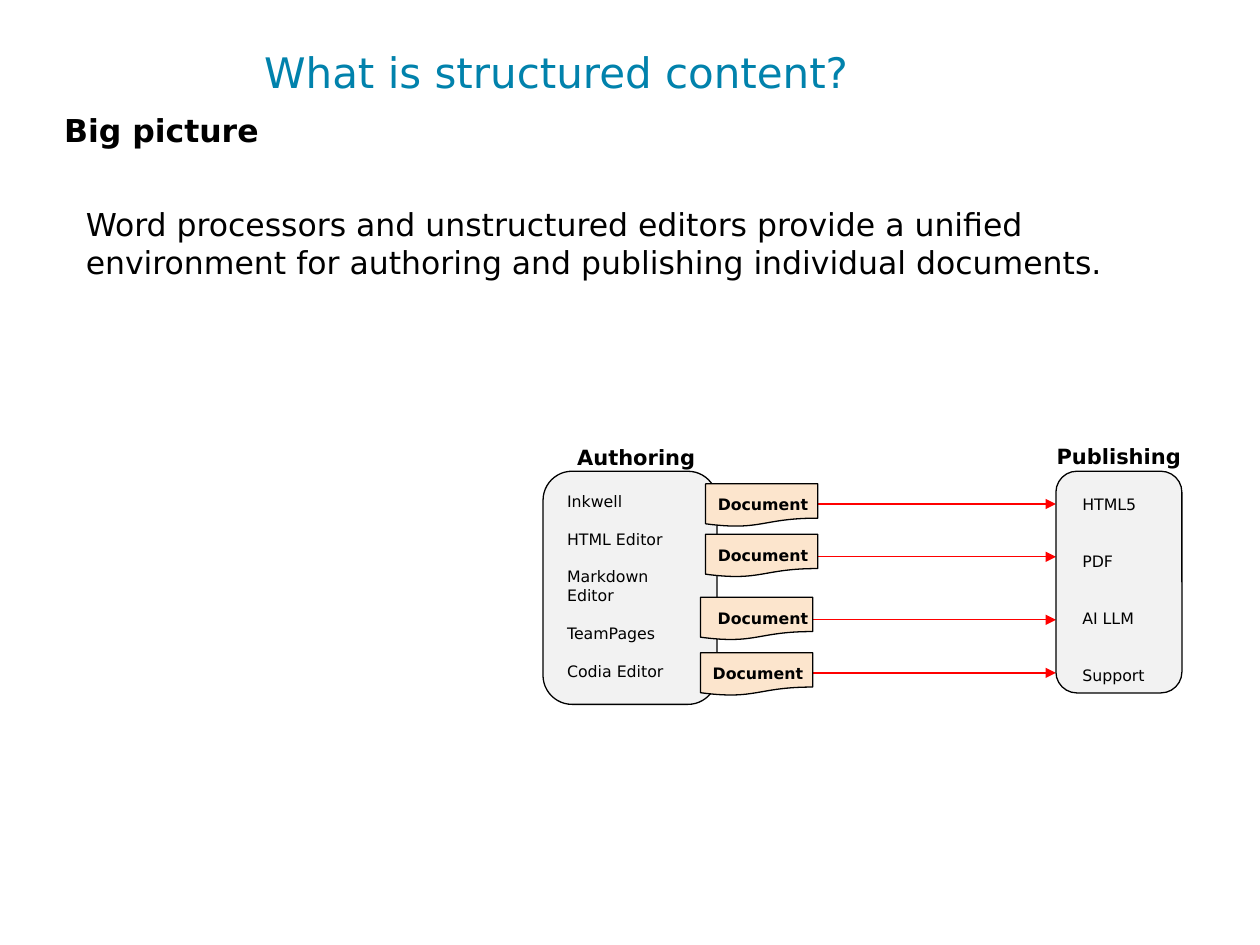
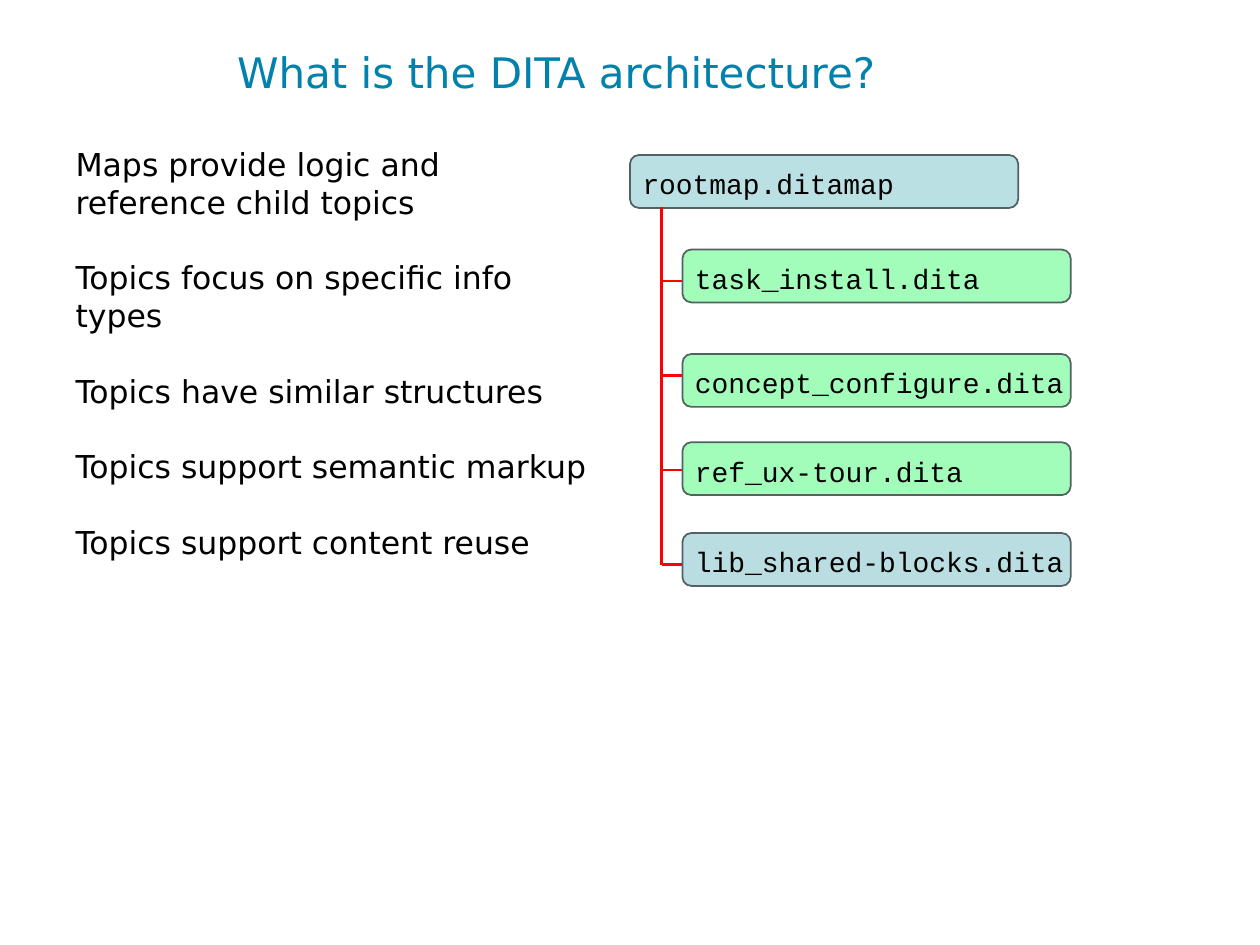
from lxml.etree import SubElement
from pptx import Presentation
from pptx.dml.color import RGBColor
from pptx.enum.shapes import MSO_CONNECTOR as Connector, MSO_SHAPE as Shape
from pptx.enum.text import MSO_ANCHOR as Anchor, MSO_AUTO_SIZE as AutoSize, PP_ALIGN as Align
from pptx.oxml.ns import qn
from pptx.util import Pt

# Shared look
BLACK = RGBColor(0x00, 0x00, 0x00)
RED = RGBColor(0xFF, 0x00, 0x00)
TEAL = RGBColor(0x01, 0x82, 0xAC)
PANEL_GREY = RGBColor(0xF2, 0xF2, 0xF2)
PAPER = RGBColor(0xFC, 0xE5, 0xCD)
SLATE = RGBColor(0x52, 0x62, 0x63)
MAP_BLUE = RGBColor(0xBB, 0xE0, 0xE3)
LIBRARY_BLUE = RGBColor(0xBA, 0xDD, 0xE1)
TOPIC_GREEN = RGBColor(0xA2, 0xFC, 0xBA)
SANS, MONO = "DejaVu Sans", "Courier New"


def place(shape, left, top, width, height):
    shape.left, shape.top, shape.width, shape.height = map(Pt, (left, top, width, height))


def write(frame, lines, size, font=SANS, color=BLACK, bold=False, align=Align.LEFT,
          gap=0, anchor=Anchor.TOP, insets=(7.2, 3.6, 7.2, 3.6)):
    """Fill a text frame, one paragraph a line, with gap points between them."""
    frame.text = "\n".join(lines)
    frame.auto_size = AutoSize.NONE
    frame.word_wrap = True
    frame.vertical_anchor = anchor
    (frame.margin_left, frame.margin_top,
     frame.margin_right, frame.margin_bottom) = map(Pt, insets)
    for index, para in enumerate(frame.paragraphs):
        para.alignment = align
        para.space_before = Pt(gap if index else 0)
        for span in para.runs:
            span.font.size, span.font.name = Pt(size), font
            span.font.bold, span.font.color.rgb = bold, color


def add_page(deck, title, body_lines, body_area, gap=0):
    """Add a page with the shared title style and an unbulleted body."""
    page = deck.slides.add_slide(deck.slide_layouts[1])
    place(page.shapes.title, 23.8, 21.6, 588.2, 38.2)
    write(page.shapes.title.text_frame, [title], 24, color=TEAL,
          align=Align.CENTER, anchor=Anchor.MIDDLE)
    body = page.placeholders[1]
    place(body, *body_area)
    write(body.text_frame, body_lines, 18, gap=gap)
    for para in body.text_frame.paragraphs:
        properties = para.alignment is not None and para._p.get_or_add_pPr()
        properties.set("marL", "0")
        properties.set("indent", "0")
        SubElement(properties, qn("a:buNone"))
    return page


def add_label(page, text, area, size, align=Align.LEFT):
    box = page.shapes.add_textbox(*map(Pt, area))
    write(box.text_frame, [text], size, bold=True, align=align)


def add_block(page, kind, area, fill, lines, size, line=BLACK, weight=0.75, **style):
    """Add an outlined, filled shape that holds its own text."""
    block = page.shapes.add_shape(kind, *map(Pt, area))
    block.shadow.inherit = False
    block.fill.solid()
    block.fill.fore_color.rgb = fill
    block.line.color.rgb = line
    block.line.width = Pt(weight)
    write(block.text_frame, lines, size, **style)


def add_line(page, start, end, weight, arrow=False):
    line = page.shapes.add_connector(Connector.STRAIGHT, *map(Pt, (*start, *end)))
    line.line.color.rgb = RED
    line.line.width = Pt(weight)
    properties = line.element.spPr
    if arrow:
        SubElement(properties.find(qn("a:ln")), qn("a:tailEnd"), type="triangle")
    SubElement(properties, qn("a:effectLst"))


def build_content_page(deck):
    page = add_page(
        deck, "What is structured content?",
        ["Word processors and unstructured editors provide a unified environment "
         "for authoring and publishing individual documents."],
        (41.8, 113.8, 635.8, 51.1))
    add_label(page, "Big picture", (29.5, 59.8, 140, 28.8), 18)

    # Arrows from documents to publishing
    for y in (288, 318.2, 354.2, 384.5):
        add_line(page, (458.6, y), (603.4, y), 0.75, arrow=True)

    # Authoring and publishing panels
    add_label(page, "Authoring", (316.8, 250.6, 93.6, 25), 12, Align.CENTER)
    add_label(page, "Publishing", (576.7, 249.8, 125.3, 25), 12, Align.CENTER)
    add_block(page, Shape.ROUNDED_RECTANGLE, (310.3, 269.3, 99.4, 133.2), PANEL_GREY,
              ["Inkwell", "HTML Editor", "Markdown Editor", "TeamPages", "Codia Editor"],
              9, gap=10.8, insets=(8.9, 6.7, 10.3, 0))
    add_block(page, Shape.ROUNDED_RECTANGLE, (603.4, 269.3, 72, 126.7), PANEL_GREY,
              ["HTML5", "PDF", "AI LLM", "Support"],
              9, gap=21.6, insets=(11.6, 10.2, 0, 0))

    # Documents: left, top, text indent
    documents = [(403.2, 276.5, 1.4), (403.2, 305.3, 1.4),
                 (400.3, 341.3, 7.2), (400.3, 373, 1.4)]
    for left, top, indent in documents:
        add_block(page, Shape.FLOWCHART_DOCUMENT, (left, top, 64.1, 24.5), PAPER,
                  ["Document"], 9, bold=True, align=Align.CENTER,
                  insets=(indent, 6.5, 0, 0))


def build_architecture_page(deck):
    page = add_page(
        deck, "What is the DITA architecture?",
        ["Maps provide logic and\vreference child topics",
         "Topics focus on specific info\vtypes",
         "Topics have similar structures",
         "Topics support semantic markup",
         "Topics support content reuse"],
        (36, 79.2, 311.8, 269.3), gap=21.6)

    # Branches of the map tree
    trunk, first_branch, pitch = 378, 160.6, 54
    branches = [first_branch + pitch * index for index in range(4)]
    for y in branches:
        add_line(page, (414, y), (trunk, y), 1.5)

    # Map and topic files
    files = [
        ("rootmap.ditamap", 360, 88.6, MAP_BLUE),
        ("task_install.dita", 390, 142.6, TOPIC_GREEN),
        ("concept_configure.dita", 390, 202.3, TOPIC_GREEN),
        ("ref_ux-tour.dita", 390, 252.7, TOPIC_GREEN),
        ("lib_shared-blocks.dita", 390, 304.6, LIBRARY_BLUE),
    ]
    for name, left, top, fill in files:
        add_block(page, Shape.ROUNDED_RECTANGLE, (left, top, 221.8, 30.2), fill, [name], 16,
                  line=SLATE, weight=1, font=MONO, insets=(5.7, 5.3, 0, 0))
    add_line(page, (trunk, 118.1), (trunk, branches[-1]), 1.5)


def main():
    deck = Presentation()
    deck.slide_width, deck.slide_height = Pt(720), Pt(540)
    build_content_page(deck)
    build_architecture_page(deck)
    deck.save("out.pptx")


if __name__ == "__main__":
    main()
